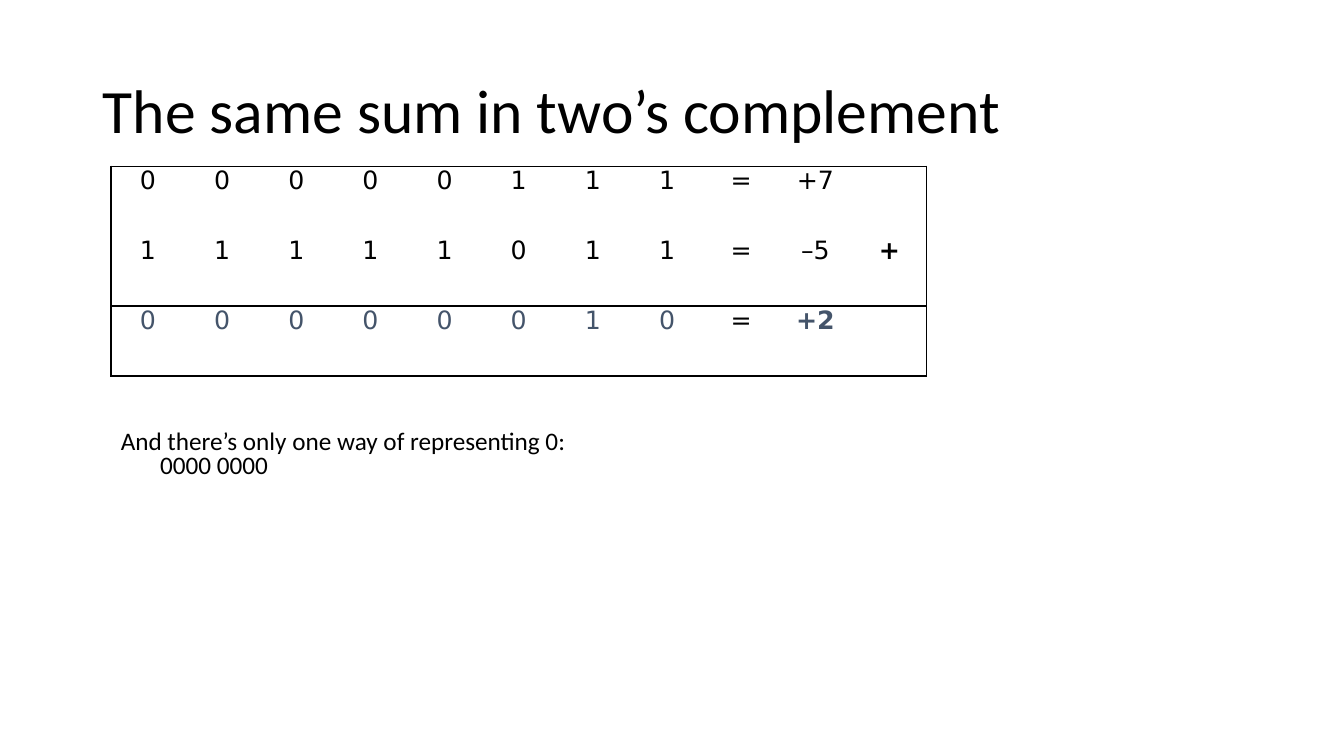
import dataclasses

import lxml.etree
import pptx
import pptx.dml.color
import pptx.enum.text
import pptx.oxml.ns
import pptx.util

Inches = pptx.util.Inches
Align = pptx.enum.text.PP_ALIGN


@dataclasses.dataclass(frozen=True)
class Theme:
    """Colours, fonts, sizes and line widths of the slide."""
    ink: str = "000000"
    result: str = "44546A"
    text_font: str = "Calibri"
    digit_font: str = "DejaVu Sans"
    title_size: int = 44
    body_size: int = 18
    frame_width: float = 1
    sum_width: float = 2.25


THEME = Theme()
SUM_ROWS = [
    ["0", "0", "0", "0", "0", "1", "1", "1", "=", "+7", ""],
    ["1", "1", "1", "1", "1", "0", "1", "1", "=", "–5", "+"],
    ["0", "0", "0", "0", "0", "0", "1", "0", "=", "+2", ""],
]


def write_text(paragraph, text, font=THEME.text_font, size=THEME.body_size,
               color=THEME.ink, bold=False, align=Align.LEFT, spacing=None):
    """Put formatted text in a paragraph."""
    paragraph.alignment = align
    if spacing:
        paragraph.line_spacing = spacing
    run = paragraph.add_run()
    run.text = text
    run.font.name = font
    run.font.size = pptx.util.Pt(size)
    run.font.bold = bold
    run.font.color.rgb = pptx.dml.color.RGBColor.from_string(color)


def set_borders(cell, widths):
    """Draw the sides that have a width and clear the others."""
    properties = cell._tc.get_or_add_tcPr()
    qualify = pptx.oxml.ns.qn
    for side in "LRTB":
        line = lxml.etree.SubElement(properties, qualify(f"a:ln{side}"))
        width = widths.get(side)
        if width:
            line.set("w", str(pptx.util.Pt(width)))
            fill = lxml.etree.SubElement(line, qualify("a:solidFill"))
            lxml.etree.SubElement(fill, qualify("a:srgbClr"), val=THEME.ink)
        else:
            lxml.etree.SubElement(line, qualify("a:noFill"))


def add_title(slide, left, top, width, height):
    """Place the title in its box."""
    title = slide.shapes.title
    title.left, title.top, title.width, title.height = left, top, width, height
    frame = title.text_frame
    frame.auto_size = pptx.enum.text.MSO_AUTO_SIZE.NONE
    frame.vertical_anchor = pptx.enum.text.MSO_ANCHOR.MIDDLE
    write_text(frame.paragraphs[0], "The same sum in two’s complement",
               size=THEME.title_size, spacing=0.9)


def add_sum_table(slide, left, top, width, height):
    """Lay out the binary sum with a heavy rule above its result."""
    row_count, column_count = len(SUM_ROWS), len(SUM_ROWS[0])
    last_row, last_column = row_count - 1, column_count - 1
    table = slide.shapes.add_table(row_count, column_count, left, top, width, height).table
    table.first_row = table.horz_banding = False
    for row, values in enumerate(SUM_ROWS):
        for column, value in enumerate(values):
            cell = table.cell(row, column)
            cell.margin_left = cell.margin_right = 0
            cell.margin_top = cell.margin_bottom = 0
            widths = {
                "L": THEME.frame_width if column == 0 else None,
                "R": THEME.frame_width if column == last_column else None,
                "T": {0: THEME.frame_width, last_row: THEME.sum_width}.get(row),
                "B": {last_row - 1: THEME.sum_width, last_row: THEME.frame_width}.get(row),
            }
            set_borders(cell, widths)
            cell.fill.background()
            if value:
                is_result = row == last_row and value != "="
                write_text(cell.text_frame.paragraphs[0], value,
                           font=THEME.digit_font, align=Align.CENTER,
                           color=THEME.result if is_result else THEME.ink,
                           bold=value in ("+", "+2"))


def add_zero_note(slide, left, top, width, height):
    """Add the remark on zero with its value indented below."""
    frame = slide.shapes.add_textbox(left, top, width, height).text_frame
    frame.word_wrap = True
    write_text(frame.paragraphs[0], "And there’s only one way of representing 0:", spacing=0.8)
    value = frame.add_paragraph()
    value._p.get_or_add_pPr().set("marL", str(Inches(0.39)))
    write_text(value, "0000 0000", spacing=0.8)


def main():
    """Build and save the slide."""
    presentation = pptx.Presentation()
    presentation.slide_width = Inches(13.33)
    presentation.slide_height = Inches(7.5)
    slide = presentation.slides.add_slide(presentation.slide_layouts.get_by_name("Title Only"))
    add_title(slide, Inches(0.92), Inches(0.4), Inches(11.5), Inches(1.45))
    add_sum_table(slide, Inches(1.1), Inches(1.65), Inches(8.09), Inches(2.08))
    add_zero_note(slide, Inches(1.1), Inches(4.23), Inches(6.67), Inches(0.59))
    presentation.save("out.pptx")


if __name__ == "__main__":
    main()
